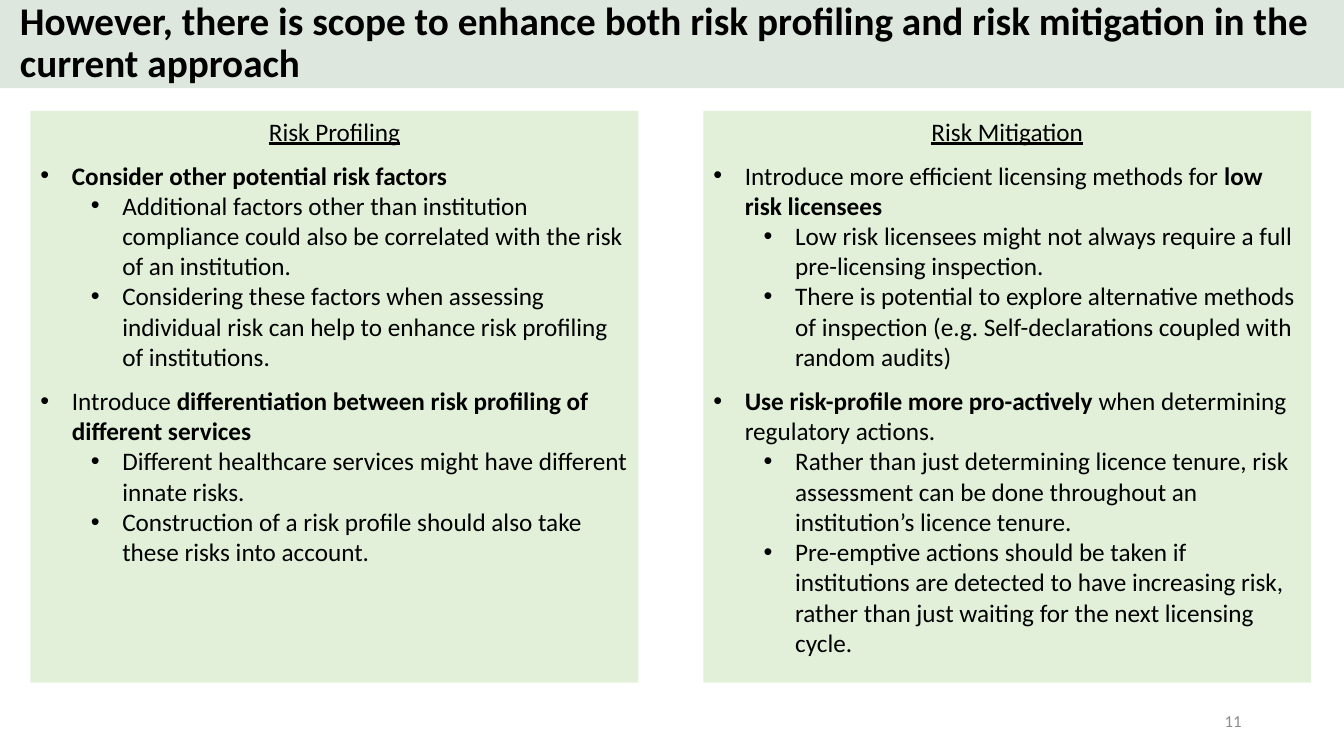
from dataclasses import dataclass

from lxml import etree
from pptx import Presentation
from pptx import util as u
from pptx.dml.color import RGBColor
from pptx.enum import shapes, text
from pptx.oxml import ns

Pt = u.Pt


@dataclass(frozen=True)
class Theme:
    """Colours, font and type sizes of the slide."""
    font: str = "Calibri"
    ink: str = "000000"
    muted: str = "8C8C8C"
    band: str = "DEE7DD"
    panel: str = "E2F0D9"
    title_size: int = 28
    body_size: int = 18
    number_size: int = 12


THEME = Theme()

PROFILING = [
    (0, [("Consider other potential risk factors", True)]),
    (1, [("Additional factors other than institution compliance could also be "
          "correlated with the risk of an institution.", False)]),
    (1, [("Considering these factors when assessing individual risk can help to "
          "enhance risk profiling of institutions.", False)]),
    (0, [("Introduce ", False),
         ("differentiation between risk profiling of different services", True)]),
    (1, [("Different healthcare services might have different innate risks.", False)]),
    (1, [("Construction of a risk profile should also take these risks into "
          "account.", False)]),
]
MITIGATION = [
    (0, [("Introduce more efficient licensing methods for ", False),
         ("low risk licensees", True)]),
    (1, [("Low risk licensees might not always require a full pre-licensing "
          "inspection.", False)]),
    (1, [("There is potential to explore alternative methods of inspection (e.g. "
          "Self-declarations coupled with random audits)", False)]),
    (0, [("Use risk-profile more pro-actively ", True),
         ("when determining regulatory actions.", False)]),
    (1, [("Rather than just determining licence tenure, risk assessment can be done "
          "throughout an institution’s licence tenure.", False)]),
    (1, [("Pre-emptive actions should be taken if institutions are detected to have "
          "increasing risk, rather than just waiting for the next licensing cycle.",
          False)]),
]


def add_run(paragraph, words, size, color=THEME.ink, bold=False, underline=False):
    """Append one formatted run to a paragraph."""
    run = paragraph.add_run()
    run.text = words
    font = run.font
    font.name, font.size = THEME.font, Pt(size)
    font.bold, font.underline = bold, underline
    font.color.rgb = RGBColor.from_string(color)


def add_block(slide, box, fill):
    """Draw a plain filled rectangle in the box."""
    block = slide.shapes.add_shape(shapes.MSO_SHAPE.RECTANGLE, *map(Pt, box))
    block.shadow.inherit = False
    block.fill.solid()
    block.fill.fore_color.rgb = RGBColor.from_string(fill)
    block.line.fill.background()
    return block


def add_label(slide, box):
    """Add a wrapping, vertically centred text box and return its paragraph."""
    frame = slide.shapes.add_textbox(*map(Pt, box)).text_frame
    frame.word_wrap = True
    frame.vertical_anchor = text.MSO_ANCHOR.MIDDLE
    return frame.paragraphs[0]


def set_bullet(paragraph, level):
    """Give a paragraph a hanging round bullet at its level."""
    hang = 22.5
    paragraph.level = level
    props = paragraph._p.get_or_add_pPr()
    props.set("marL", str(Pt(hang + 36 * level)))
    props.set("indent", str(-Pt(hang)))
    etree.SubElement(props, ns.qn("a:buFont"), typeface="Arial")
    etree.SubElement(props, ns.qn("a:buChar"), char="•")


def header(slide, box):
    """Place the title on its full-width band."""
    left, top, width, height = box
    add_block(slide, box, THEME.band)
    title = add_label(slide, (left + 7.2, top + 5, width - 16, height - 10.8))
    title.line_spacing = 0.9
    add_run(title, "However, there is scope to enhance both risk profiling and risk "
            "mitigation in the current approach", THEME.title_size, bold=True)


def risk_panel(slide, box, heading, points):
    """Place a panel with an underlined heading and two levels of bullets."""
    frame = add_block(slide, box, THEME.panel).text_frame
    frame.word_wrap = True
    frame.vertical_anchor = text.MSO_ANCHOR.TOP
    caption = frame.paragraphs[0]
    caption.alignment = text.PP_ALIGN.CENTER
    add_run(caption, heading, THEME.body_size, underline=True)
    for level, pieces in points:
        point = frame.add_paragraph()
        point.alignment = text.PP_ALIGN.LEFT
        point.space_before = Pt(0 if level else 9.8)
        set_bullet(point, level)
        for words, bold in pieces:
            add_run(point, words, THEME.body_size, bold=bold)


def page_number(slide, box):
    """Place the right-aligned slide number."""
    number = add_label(slide, box)
    number.alignment = text.PP_ALIGN.RIGHT
    add_run(number, "11", THEME.number_size, color=THEME.muted)


def main():
    """Build the slide and save it."""
    deck = Presentation()
    deck.slide_width, deck.slide_height = Pt(960), Pt(540)
    slide = deck.slides.add_slide(deck.slide_layouts[6])
    header(slide, (0, 0, 960, 63))
    panels = [("Risk Profiling", PROFILING), ("Risk Mitigation", MITIGATION)]
    for column, (heading, points) in enumerate(panels):
        risk_panel(slide, (21.8 + 480.6 * column, 79.2, 434.2, 408.4), heading, points)
    page_number(slide, (678, 500.5, 216, 28.75))
    deck.save("out.pptx")


if __name__ == "__main__":
    main()
